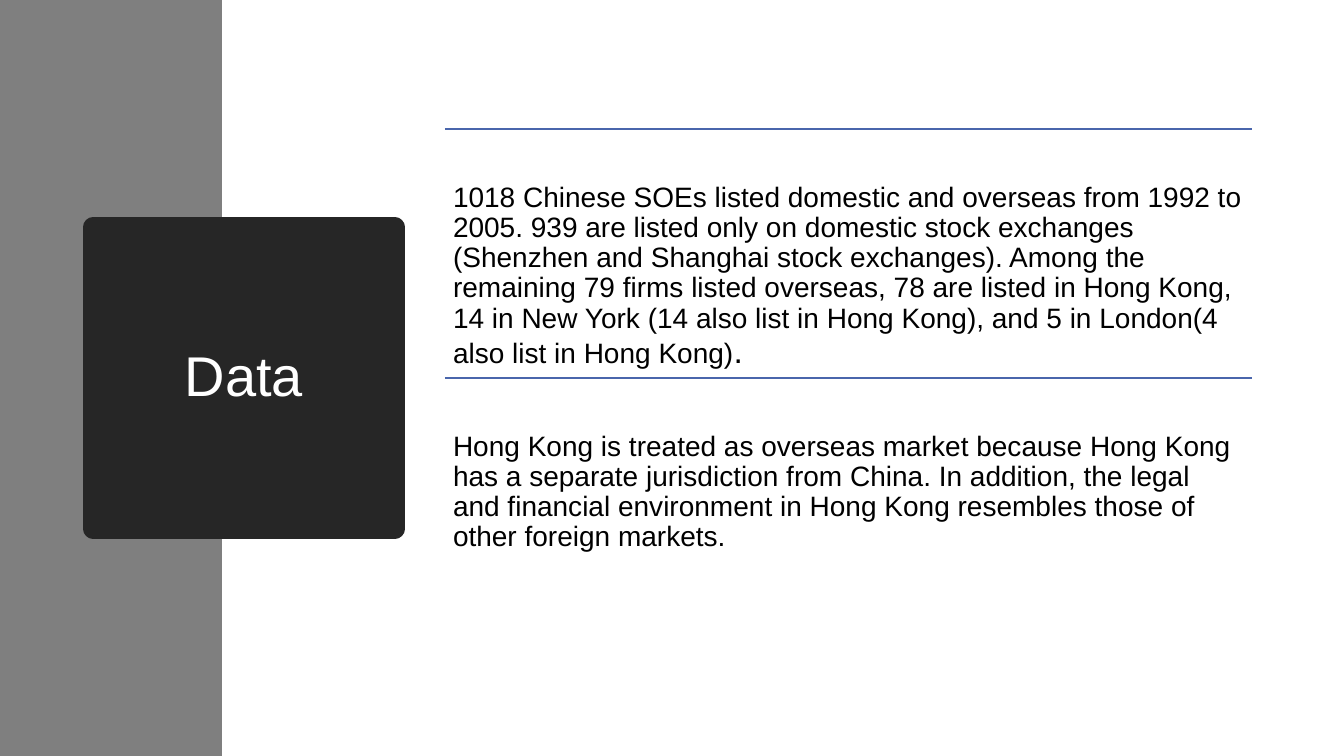
from lxml import etree
from pptx import Presentation
from pptx.dml.color import RGBColor
from pptx.enum.shapes import MSO_CONNECTOR as LINE, MSO_SHAPE as SHAPE
from pptx.enum.text import MSO_ANCHOR as ANCHOR, MSO_AUTO_SIZE as FIT, PP_ALIGN as ALIGN
from pptx.oxml.ns import qn
from pptx.util import Emu, Pt

GRAY = RGBColor(0x7F, 0x7F, 0x7F)
DARK = RGBColor(0x26, 0x26, 0x26)
BLUE = RGBColor(0x4A, 0x66, 0xAC)
BLACK = RGBColor(0, 0, 0)
WHITE = RGBColor(0xFF, 0xFF, 0xFF)


def px(n):
    """Turn pixels at 100.8 to the inch into EMU."""
    return Emu(round(n * 914400 / 100.8))


def style(para, size, color):
    para.line_spacing = 0.9
    para.font.name = "Arial"
    para.font.size = Pt(size)
    para.font.color.rgb = color


deck = Presentation()
deck.slide_width, deck.slide_height = px(1344), px(756)
slide = deck.slides.add_slide(deck.slide_layouts[5])
shapes = slide.shapes

# Side bar, behind the title
bar = shapes.add_shape(SHAPE.RECTANGLE, 0, 0, px(222), px(756))
bar.shadow.inherit = False
bar.fill.solid()
bar.fill.fore_color.rgb = GRAY
bar.line.fill.background()

# Title box; its thick line rounds the corners
title = shapes.title
bar._element.addnext(title._element)
title.left, title.top, title.width, title.height = px(93), px(227), px(302), px(302)
title.fill.solid()
title.fill.fore_color.rgb = DARK
title.line.color.rgb = DARK
title.line.width = Pt(13.75)
frame = title.text_frame
frame.text = "Data"
frame.auto_size = FIT.NONE
frame.vertical_anchor = ANCHOR.MIDDLE
frame.paragraphs[0].alignment = ALIGN.CENTER
style(frame.paragraphs[0], 40, WHITE)

# Ruled text blocks: body, then a larger full stop where there is one
blocks = [
    ("1018 Chinese SOEs listed domestic and overseas from 1992 to 2005. "
     "939 are listed only on domestic stock exchanges (Shenzhen and Shanghai "
     "stock exchanges). Among the remaining 79 firms listed overseas, 78 are "
     "listed in Hong Kong, 14 in New York (14 also list in Hong Kong), and 5 "
     "in London(4 also list in Hong Kong)", "."),
    ("Hong Kong is treated as overseas market because Hong Kong has a separate "
     "jurisdiction from China. In addition, the legal and financial environment "
     "in Hong Kong resembles those of other foreign markets.", ""),
]
LEFT, TOP, WIDE, STEP = 445, 129, 807, 249
for i, (body, stop) in enumerate(blocks):
    y = TOP + i * STEP
    rule = shapes.add_connector(LINE.STRAIGHT, px(LEFT), px(y), px(LEFT + WIDE), px(y))
    rule.line.color.rgb = BLUE
    rule.line.width = Pt(1)
    etree.SubElement(rule._element.spPr, qn("a:effectLst"))

    box = shapes.add_textbox(px(LEFT), px(y), px(WIDE), px(STEP))
    frame = box.text_frame
    frame.word_wrap = True
    frame.margin_left = frame.margin_right = frame.margin_bottom = px(8)
    frame.margin_top = px(54)
    para = frame.paragraphs[0]
    style(para, 20, BLACK)
    para.add_run().text = body
    if stop:
        run = para.add_run()
        run.text = stop
        run.font.size = Pt(24)

deck.save("out.pptx")
